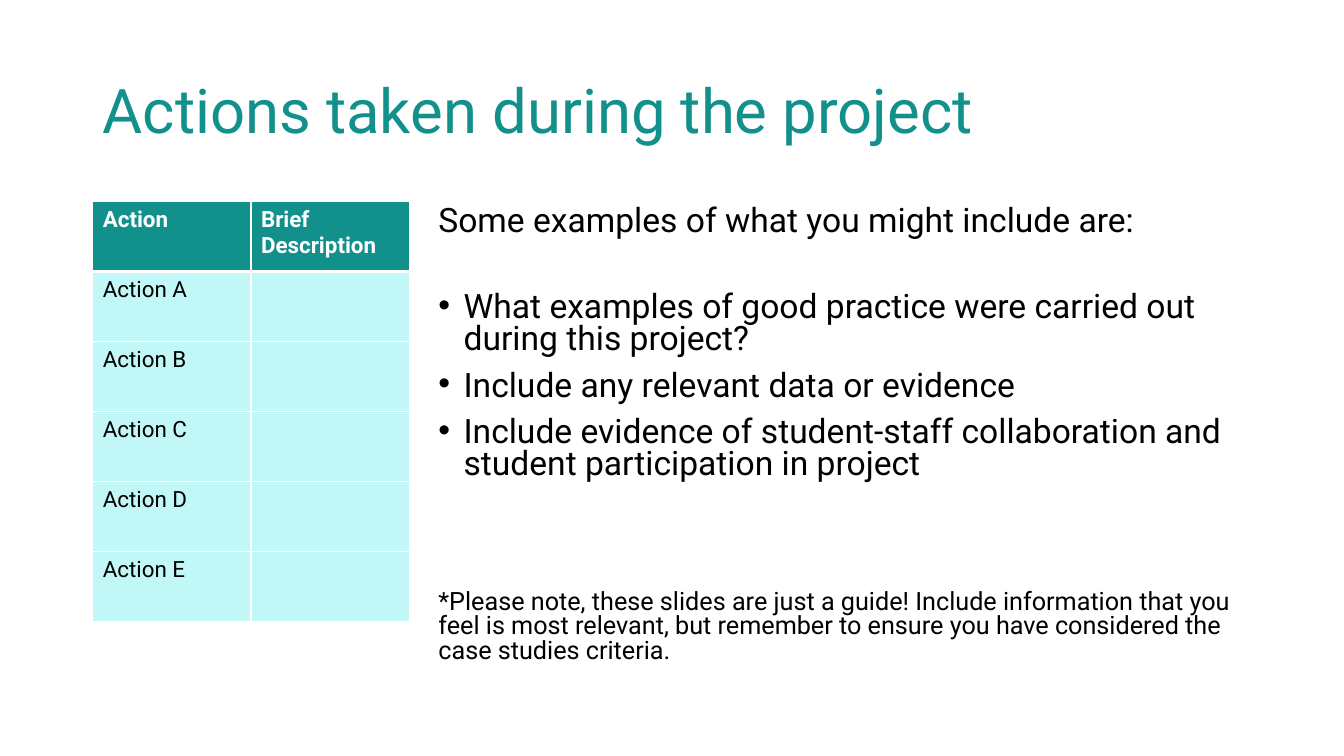
import pptx
import pptx.util
import pptx.dml.color
import pptx.enum.text
import pptx.oxml
import pptx.oxml.ns

TEAL, PALE, WHITE, BLACK = "12908C", "C1F7F6", "FFFFFF", "000000"
FONT = "Roboto"

HEADING = "Actions taken during the project"
HEADERS = ["Action", "Brief Description"]
ACTIONS = ["Action A", "Action B", "Action C", "Action D", "Action E"]
GUIDANCE = [
    {"text": "Some examples of what you might include are:", "size": 24, "before": 10, "bullet": False},
    {"text": "What examples of good practice were carried out during this project?", "size": 24, "before": 38.5, "bullet": True},
    {"text": "Include any relevant data or evidence", "size": 24, "before": 10, "bullet": True},
    {"text": "Include evidence of student-staff collaboration and student participation in project", "size": 24, "before": 10, "bullet": True},
    {"text": "*Please note, these slides are just a guide! Include information that you feel is most relevant, but remember to ensure you have considered the case studies criteria.", "size": 18, "before": 78, "bullet": False},
]

WIDTH, HEIGHT = 13.33, 7.5
MARGIN, CONTENT_TOP = 0.92, 2
COLUMN, ROW = 1.57, 0.695
GUIDANCE_LEFT = 4.25
INDENT = 0.25

inches = pptx.util.Inches


def color(value):
    return pptx.dml.color.RGBColor.from_string(value)


def add_run(paragraph, text, size, ink, bold=False):
    run = paragraph.add_run()
    run.text = text
    run.font.name = FONT
    run.font.size = pptx.util.Pt(size)
    run.font.bold = bold
    run.font.color.rgb = color(ink)


def add_text_frame(slide, left, top, width, height):
    frame = slide.shapes.add_textbox(*map(inches, (left, top, width, height))).text_frame
    frame.word_wrap = True
    return frame


def add_bullet(paragraph):
    properties = paragraph._p.get_or_add_pPr()
    properties.set("marL", str(inches(INDENT)))
    properties.set("indent", str(-inches(INDENT)))
    for tag, attribute, value in (("buFont", "typeface", "Arial"), ("buChar", "char", "•")):
        mark = properties.makeelement(pptx.oxml.ns.qn("a:" + tag), {attribute: value})
        properties.append(mark)


def style_cell(cell, fill, bottom):
    cell.fill.solid()
    cell.fill.fore_color.rgb = color(fill)
    properties = cell._tc.get_or_add_tcPr()
    for position, (side, points) in enumerate((("L", 1), ("R", 1), ("T", 1), ("B", bottom))):
        border = pptx.oxml.parse_xml(
            f'<a:ln{side} {pptx.oxml.ns.nsdecls("a")} w="{pptx.util.Pt(points)}">'
            f'<a:solidFill><a:srgbClr val="{WHITE}"/></a:solidFill></a:ln{side}>')
        properties.insert(position, border)


def add_heading(slide):
    frame = add_text_frame(slide, MARGIN, 0.4, WIDTH - 2 * MARGIN, 1.45)
    frame.vertical_anchor = pptx.enum.text.MSO_ANCHOR.MIDDLE
    paragraph = frame.paragraphs[0]
    paragraph.line_spacing = 0.9
    add_run(paragraph, HEADING, 44, TEAL)


def add_guidance(slide):
    frame = add_text_frame(slide, GUIDANCE_LEFT, CONTENT_TOP, WIDTH - MARGIN - GUIDANCE_LEFT, 4.76)
    for index, item in enumerate(GUIDANCE):
        paragraph = frame.add_paragraph() if index else frame.paragraphs[0]
        paragraph.line_spacing = 0.8
        paragraph.space_before = pptx.util.Pt(item["before"])
        if item["bullet"]:
            add_bullet(paragraph)
        add_run(paragraph, item["text"], item["size"], BLACK)


def add_actions(slide):
    rows = [HEADERS] + [[action, ""] for action in ACTIONS]
    area = (MARGIN, CONTENT_TOP, COLUMN * len(HEADERS), ROW * len(rows))
    table = slide.shapes.add_table(len(rows), len(HEADERS), *map(inches, area)).table
    for r, row in enumerate(rows):
        header = r == 0
        for c, text in enumerate(row):
            cell = table.cell(r, c)
            style_cell(cell, TEAL if header else PALE, 3 if header else 1)
            if text:
                add_run(cell.text_frame.paragraphs[0], text, 16, WHITE if header else BLACK, header)


def main():
    deck = pptx.Presentation()
    deck.slide_width, deck.slide_height = inches(WIDTH), inches(HEIGHT)
    slide = deck.slides.add_slide(deck.slide_layouts[6])
    add_heading(slide)
    add_guidance(slide)
    add_actions(slide)
    deck.save("out.pptx")


if __name__ == "__main__":
    main()
